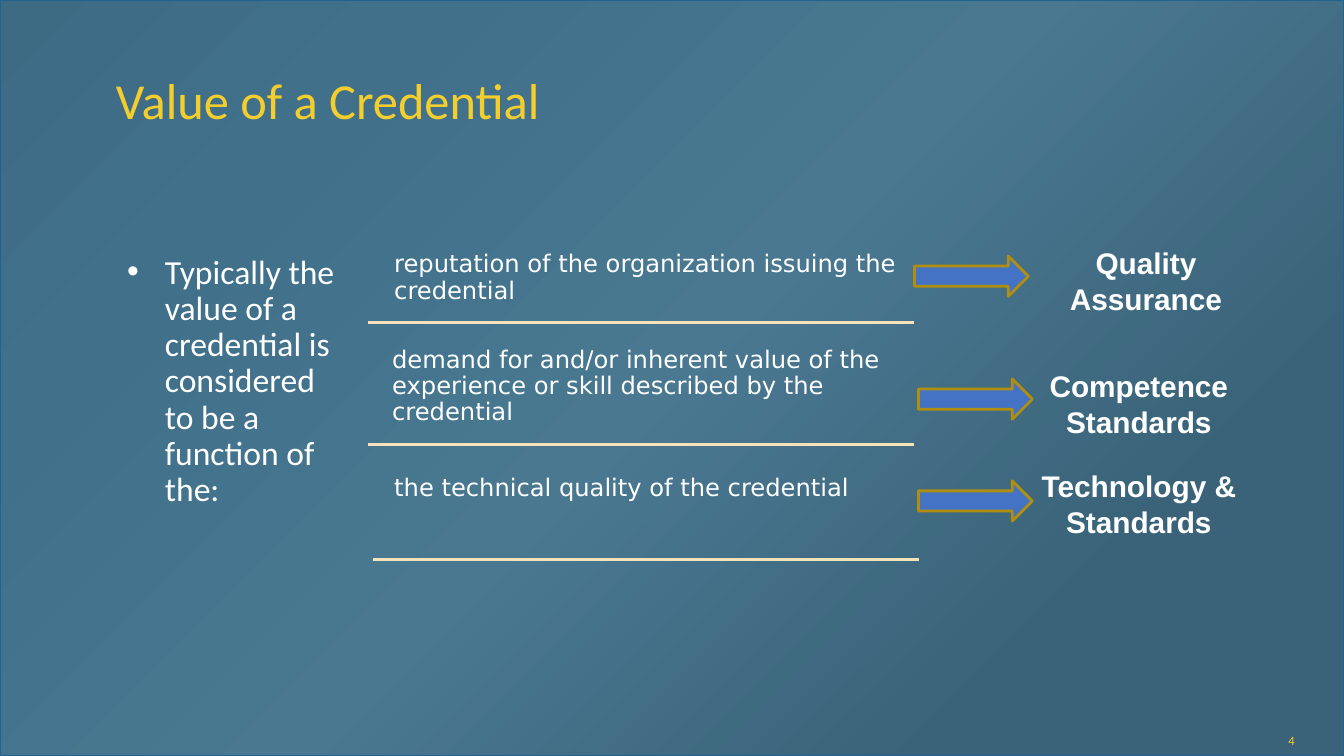
import pptx
import pptx.dml.color
import pptx.enum.shapes
import pptx.enum.text
import pptx.oxml
import pptx.oxml.ns
import pptx.util
from pptx.util import Inches

RGBColor = pptx.dml.color.RGBColor
WHITE = RGBColor(0xFF, 0xFF, 0xFF)
YELLOW = RGBColor(0xF4, 0xCE, 0x2C)
CREAM = RGBColor(0xF6, 0xE3, 0xBB)
ARROW_BLUE = RGBColor(0x44, 0x72, 0xC4)
ARROW_GOLD = RGBColor(0xB0, 0x8F, 0x10)
VEIL_BLUE = RGBColor(0x61, 0x93, 0xAD)
FRAME_BLUE = RGBColor(0x22, 0x62, 0x92)
GRADIENT_STOPS = [
    (0, RGBColor(0x26, 0x50, 0x68)),
    (21, RGBColor(0x2A, 0x58, 0x72)),
    (50, RGBColor(0x3A, 0x66, 0x7E)),
    (80, RGBColor(0x1F, 0x42, 0x55)),
    (99, RGBColor(0x1F, 0x42, 0x55)),
]
ALIGN = pptx.enum.text.PP_ALIGN
ANCHOR = pptx.enum.text.MSO_ANCHOR
PRESET = pptx.enum.shapes.MSO_SHAPE


def place(shape, left, top, width, height):
    shape.left, shape.top = Inches(left), Inches(top)
    shape.width, shape.height = Inches(width), Inches(height)


def write(shape, text, size, font, color, inset, align=ALIGN.LEFT,
          anchor=ANCHOR.TOP, spacing=1.0, bold=False):
    frame = shape.text_frame
    frame.text = text
    frame.word_wrap = True
    frame.auto_size = pptx.enum.text.MSO_AUTO_SIZE.NONE
    frame.vertical_anchor = anchor
    frame.margin_left = frame.margin_right = Inches(inset[0])
    frame.margin_top = frame.margin_bottom = Inches(inset[1])
    for paragraph in frame.paragraphs:
        paragraph.alignment = align
        paragraph.line_spacing = spacing
        paragraph.space_before = pptx.util.Pt(0)
        for run in paragraph.runs:
            run.font.size = pptx.util.Pt(size)
            run.font.name = font
            run.font.bold = bold
            run.font.color.rgb = color


presentation = pptx.Presentation()
presentation.slide_width = Inches(13.33)
presentation.slide_height = Inches(7.5)
slide = presentation.slides.add_slide(presentation.slide_layouts[1])
shapes = slide.shapes

# Background gradient
fill = slide.background.fill
fill.gradient()
fill.gradient_angle = 315
stop_list = slide.background._cSld.find(".//" + pptx.oxml.ns.qn("a:gsLst"))
for stop in list(stop_list):
    stop_list.remove(stop)
for position, color in GRADIENT_STOPS:
    stop_list.append(pptx.oxml.parse_xml(
        f'<a:gs {pptx.oxml.ns.nsdecls("a")} pos="{position * 1000}">'
        f'<a:srgbClr val="{color}"/></a:gs>'))

# Translucent veil behind everything
veil = shapes.add_shape(PRESET.RECTANGLE, 0, 0,
                        presentation.slide_width, presentation.slide_height)
veil.shadow.inherit = False
veil.fill.solid()
veil.fill.fore_color.rgb = VEIL_BLUE
veil_color = veil.element.spPr.find(".//" + pptx.oxml.ns.qn("a:srgbClr"))
veil_color.append(pptx.oxml.parse_xml(
    f'<a:alpha {pptx.oxml.ns.nsdecls("a")} val="41000"/>'))
veil.line.color.rgb = FRAME_BLUE
veil.line.width = pptx.util.Pt(1.5)
veil.element.getparent().insert(2, veil.element)

# Title
title = shapes.title
place(title, 1.02, 0.58, 11.3, 0.81)
write(title, "Value of a Credential", 36, "Calibri", YELLOW, (0.13, 0.07),
      anchor=ANCHOR.MIDDLE)

# Introduction
introduction = slide.placeholders[1]
place(introduction, 1.02, 2.29, 2.63, 3.43)
introduction.text_frame.text = ""
properties = introduction.text_frame.paragraphs[0]._p.get_or_add_pPr()
properties.set("marL", "0")
properties.set("indent", "0")
properties.append(pptx.oxml.parse_xml(
    f'<a:buNone {pptx.oxml.ns.nsdecls("a")}/>'))
write(introduction,
      "Typically the value of a credential is considered to be a function of the:",
      24, "Calibri", WHITE, (0.24, 0.24), spacing=0.9)

# Rows: factor (text, left, top), arrow (left, top),
# label (text, left, top, width), rule (left, right, height on the slide)
rows = [
    (("reputation of the organization issuing the credential", 3.75, 2.34),
     (9.07, 2.54), ("Quality\nAssurance", 10.39, 2.34, 1.95),
     (3.65, 9.07, 3.2)),
    (("demand for and/or inherent value of the experience or skill "
      "described by the credential", 3.73, 3.29),
     (9.11, 3.76), ("Competence\vStandards", 10.17, 3.56, 2.25),
     (3.65, 9.07, 4.41)),
    (("the technical quality of the credential", 3.75, 4.56),
     (9.11, 4.77), ("Technology &\vStandards", 10.07, 4.55, 2.45),
     (3.7, 9.11, 5.55)),
]
for factor, arrow_corner, label, rule_ends in rows:
    text, left, top = factor
    factor_box = shapes.add_textbox(Inches(left), Inches(top),
                                    Inches(5.31), Inches(1.07))
    write(factor_box, text, 17.3, "DejaVu Sans", WHITE, (0.16, 0.16),
          spacing=0.9)

    left, top = arrow_corner
    arrow = shapes.add_shape(PRESET.RIGHT_ARROW, Inches(left), Inches(top),
                             Inches(1.13), Inches(0.4))
    arrow.shadow.inherit = False
    arrow.fill.solid()
    arrow.fill.fore_color.rgb = ARROW_BLUE
    arrow.line.color.rgb = ARROW_GOLD
    arrow.line.width = pptx.util.Pt(2)

    text, left, top, width = label
    label_box = shapes.add_textbox(Inches(left), Inches(top),
                                   Inches(width), Inches(0.9))
    write(label_box, text, 21.3, "Arial", WHITE, (0.18, 0.09),
          align=ALIGN.CENTER, bold=True)

    left, right, height = rule_ends
    rule = shapes.add_connector(pptx.enum.shapes.MSO_CONNECTOR.STRAIGHT,
                                Inches(left), Inches(height),
                                Inches(right), Inches(height))
    rule.line.color.rgb = CREAM
    rule.line.width = pptx.util.Pt(2)
    rule.element.spPr.append(pptx.oxml.parse_xml(
        f'<a:effectLst {pptx.oxml.ns.nsdecls("a")}/>'))

# Slide number
number_box = shapes.add_textbox(Inches(12.19), Inches(7.2),
                                Inches(0.75), Inches(0.3))
write(number_box, "4", 9, "Calibri", YELLOW, (0.1, 0.05),
      align=ALIGN.RIGHT, anchor=ANCHOR.MIDDLE)

presentation.save("out.pptx")
